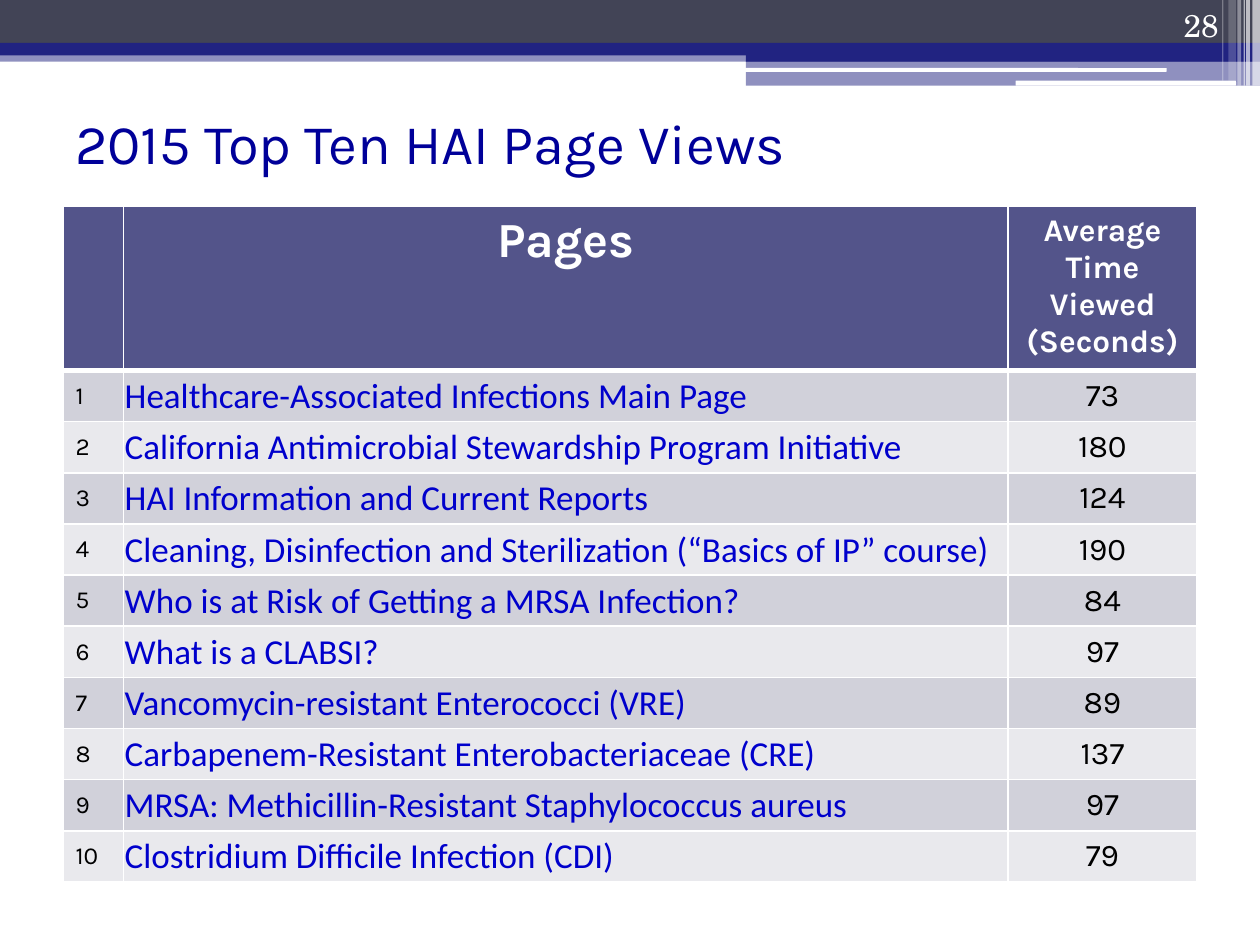
from lxml import etree
from pptx import Presentation
from pptx import util as u
from pptx.dml.color import RGBColor
from pptx.enum import shapes, text
from pptx.oxml.ns import qn

WHITE, NAVY, SLATE, HEADER = "FFFFFF", "212381", "424456", "53548A"
STRIPES = ("D1D1DA", "E9E9ED")
BANDS = [
    (0, 0.4, 10, 0.09, NAVY, 50),
    (0, 0, 10, 0.34, SLATE, 100),
    (0, 0.34, 10, 0.1, NAVY, 100),
    (5.92, 0.39, 4.08, 0.1, NAVY, 100),
    (5.92, 0.48, 4.08, 0.2, NAVY, 50),
]
RULES = [(5.91, 0.54, 3.35, 0.03), (8.06, 0.64, 1.75, 0.04)]
PINSTRIPES = [
    (9.94, 0.06, 0.68, 65),
    (9.89, 0.03, 0.68, 65),
    (9.87, 0.01, 0.68, 60),
    (9.82, 0.03, 0.68, 40),
    (9.75, 0.06, 0.64, 20),
    (9.7, 0.01, 0.64, 30),
]
VIEWS = [
    ("Healthcare-Associated Infections Main Page", 73),
    ("California Antimicrobial Stewardship Program Initiative", 180),
    ("HAI Information and Current Reports", 124),
    ("Cleaning, Disinfection and Sterilization (“Basics of IP” course)", 190),
    ("Who is at Risk of Getting a MRSA Infection?", 84),
    ("What is a CLABSI?", 97),
    ("Vancomycin-resistant Enterococci (VRE)", 89),
    ("Carbapenem-Resistant Enterobacteriaceae (CRE)", 137),
    ("MRSA: Methicillin-Resistant Staphylococcus aureus", 97),
    ("Clostridium Difficile Infection (CDI)", 79),
]


def color(value):
    """Turn a hex string into a colour."""
    return RGBColor.from_string(value)


def write(frame, words, size=18, font="Karla", ink="000000", bold=False, align="LEFT"):
    """Put one formatted paragraph into a text frame."""
    para = frame.paragraphs[0]
    para.alignment = getattr(text.PP_ALIGN, align)
    span = para.add_run()
    span.text = words
    span.font.size = u.Pt(size)
    span.font.name = font
    span.font.bold = bold
    span.font.color.rgb = color(ink)


def add_bar(page, left, top, width, height, fill, opacity=100, rounded=False):
    """Add a borderless bar, square or rounded, with the given opacity."""
    kind = shapes.MSO_SHAPE.ROUNDED_RECTANGLE if rounded else shapes.MSO_SHAPE.RECTANGLE
    bar = page.shapes.add_shape(kind, *map(u.Inches, (left, top, width, height)))
    bar.shadow.inherit = False
    bar.line.fill.background()
    bar.fill.solid()
    bar.fill.fore_color.rgb = color(fill)
    if opacity < 100:
        tint = bar.fill._xPr.find(".//" + qn("a:srgbClr"))
        etree.SubElement(tint, qn("a:alpha"), val=str(opacity * 1000))
    return bar


def add_banner(page, left, top):
    """Draw the layered band along the top from the given corner."""
    for x, y, width, height, fill, opacity in BANDS:
        add_bar(page, left + x, top + y, width, height, fill, opacity)
    for x, y, width, height in RULES:
        add_bar(page, left + x, top + y, width, height, WHITE, rounded=True)
    for x, width, height, opacity in PINSTRIPES:
        add_bar(page, left + x, top, width, height, WHITE, opacity)


def add_label(page, left, top, width, height, words, anchor, **style):
    """Add a wrapping text box holding one paragraph."""
    box = page.shapes.add_textbox(*map(u.Inches, (left, top, width, height)))
    box.text_frame.word_wrap = True
    box.text_frame.vertical_anchor = getattr(text.MSO_ANCHOR, anchor)
    write(box.text_frame, words, **style)


def style_cell(cell, fill, top=1, bottom=1, insets=(0.1, 0.05, 0.1, 0.05), anchor="MIDDLE"):
    """Set the borders, fill, insets and anchor of a cell."""
    properties = cell._tc.get_or_add_tcPr()
    for side, points in (("L", 1), ("R", 1), ("T", top), ("B", bottom)):
        edge = etree.SubElement(properties, qn(f"a:ln{side}"), w=str(u.Pt(points)))
        paint = etree.SubElement(edge, qn("a:solidFill"))
        etree.SubElement(paint, qn("a:srgbClr"), val=WHITE)
    cell.fill.solid()
    cell.fill.fore_color.rgb = color(fill)
    cell.margin_left, cell.margin_top, cell.margin_right, cell.margin_bottom = map(u.Inches, insets)
    cell.vertical_anchor = getattr(text.MSO_ANCHOR, anchor)


def add_views_table(page, left, top, width, height):
    """Build the ranked table of page views in the given box."""
    frame = page.shapes.add_table(len(VIEWS) + 1, 3, *map(u.Inches, (left, top, width, height)))
    table = frame.table
    rank_width, time_width, header_height = 0.48, 1.5, 1.3
    widths = (rank_width, width - rank_width - time_width, time_width)
    for column, size in zip(table.columns, widths):
        column.width = u.Inches(size)
    for row in table.rows:
        row.height = u.Inches((height - header_height) / len(VIEWS))
    table.rows[0].height = u.Inches(header_height)

    headings = (("", 18), ("Pages", 28), ("Average Time Viewed (Seconds)", 18))
    for cell, (words, size) in zip(table.rows[0].cells, headings):
        style_cell(cell, HEADER, bottom=3, anchor="TOP")
        if words:
            write(cell.text_frame, words, size=size, ink=WHITE, bold=True, align="CENTER")

    for rank, (name, seconds) in enumerate(VIEWS, 1):
        fill = STRIPES[(rank - 1) % 2]
        edge = 3 if rank == 1 else 1
        number, subject, time = table.rows[rank].cells
        style_cell(number, fill, top=edge)
        style_cell(subject, fill, top=edge, insets=(0.01, 0.01, 0.01, 0))
        style_cell(time, fill, top=edge)
        write(number.text_frame, str(rank), size=14)
        write(subject.text_frame, name, size=20, font="Calibri", ink="0000CC")
        write(time.text_frame, str(seconds), align="CENTER")


def main():
    """Build the slide and save the deck."""
    deck = Presentation()
    deck.slide_width, deck.slide_height = u.Inches(10), u.Inches(7.5)
    page = deck.slides.add_slide(deck.slide_layouts[6])
    add_banner(page, 0, 0)
    add_label(page, 0.5, 0.54, 9, 1.17, "2015 Top Ten HAI Page Views", "MIDDLE",
              size=32, ink="000099")
    add_views_table(page, 0.5, 1.64, 9, 5.36)
    add_label(page, 8.94, 0, 0.83, 0.4, "28", "BOTTOM",
              font="TeX Gyre Schola", ink=WHITE, align="RIGHT")
    deck.save("out.pptx")


if __name__ == "__main__":
    main()
